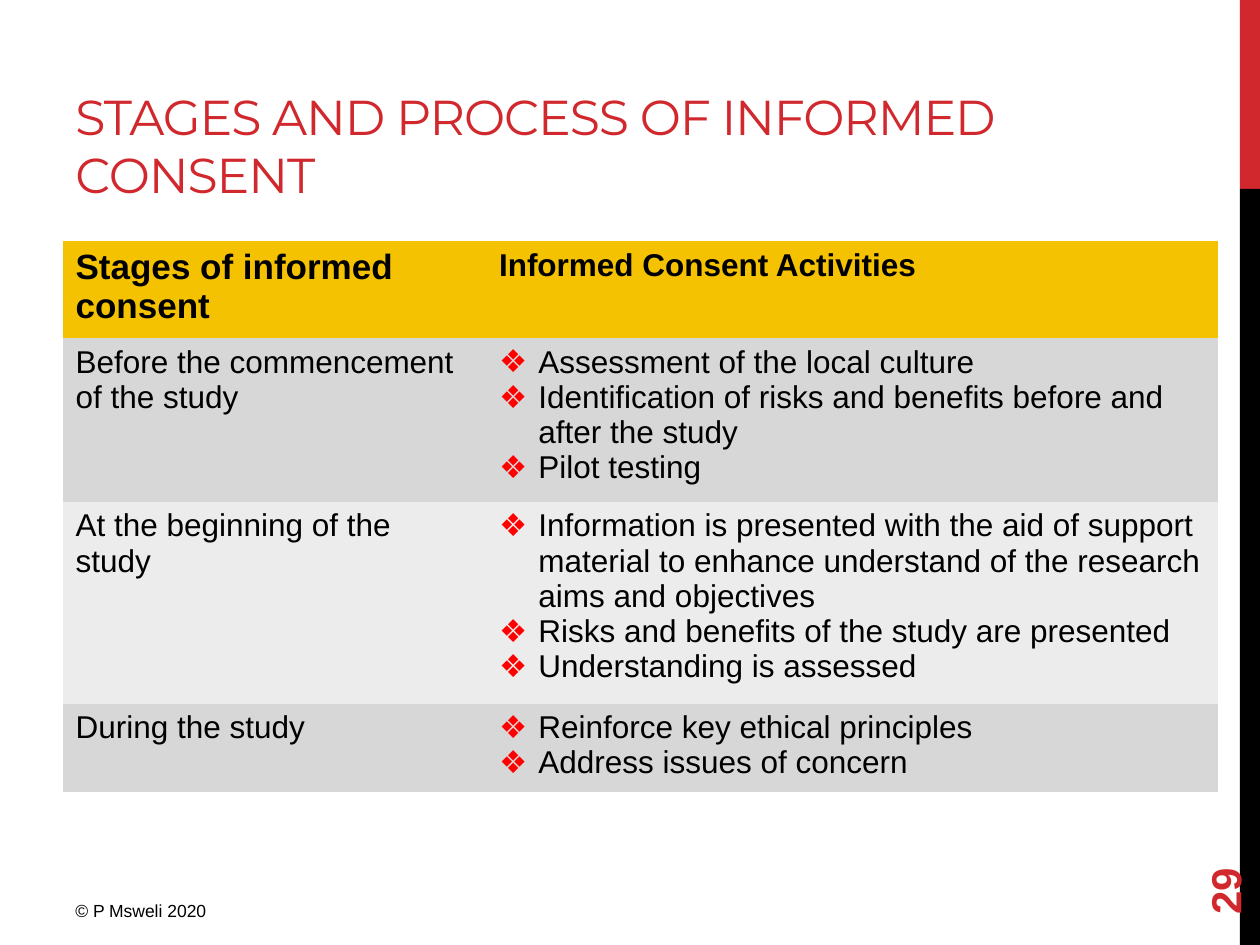
from typing import NamedTuple

from lxml.etree import SubElement
from pptx import Presentation
from pptx.dml.color import RGBColor
from pptx.enum.shapes import MSO_SHAPE as Preset
from pptx.enum.text import MSO_ANCHOR as Anchor
from pptx.oxml.ns import qn
from pptx.util import Pt

RED, BLACK, GOLD = "D1282E", "000000", "F5C201"
DARK_BAND, LIGHT_BAND, BULLET_RED = "D7D7D7", "ECECEC", "FF0000"
NO_STYLE_NO_GRID = "{2D5ABB26-0587-4C30-8999-92F81FD0307C}"
BULLET_INDENT = Pt(22.5)


class Bar(NamedTuple):
    top: float
    height: float
    color: str


class Label(NamedTuple):
    text: str
    box: tuple[float, float, float, float]
    font: dict
    color: str
    anchor: Anchor = Anchor.TOP
    rotation: float = 0
    spacing: int = 0


class Stage(NamedTuple):
    name: str
    activities: list[str]
    height: float


BARS = [Bar(0, 108, RED), Bar(108, 432, BLACK)]

LABELS = [
    Label("STAGES AND PROCESS OF INFORMED CONSENT", (36, 12, 660, 108),
          {"name": "Montserrat", "size": Pt(28)}, RED, Anchor.BOTTOM, spacing=-60),
    Label("© P Msweli 2020", (36, 511, 270, 22.5),
          {"name": "Arial", "size": Pt(10)}, BLACK),
    Label("29", (648, 463.5, 103.5, 29),
          {"name": "Arial", "size": Pt(24), "bold": True}, RED, Anchor.MIDDLE, 270),
]

HEADINGS = [("Stages of informed consent", 20), ("Informed Consent Activities", 18)]
HEADING_HEIGHT = 52
COLUMN_WIDTHS = (242, 418)
STAGES = [
    Stage("Before the commencement of the study", [
        "Assessment of the local culture",
        "Identification of risks and benefits before and after the study",
        "Pilot testing",
    ], 88),
    Stage("At the beginning of the study", [
        "Information is presented with the aid of support material "
        "to enhance understand of the research aims and objectives",
        "Risks and benefits of the study are presented",
        "Understanding is assessed",
    ], 108),
    Stage("During the study", [
        "Reinforce key ethical principles",
        "Address issues of concern",
    ], 47.5),
]


def rgb(color: str) -> RGBColor:
    return RGBColor.from_string(color)


def paint(target, color: str) -> None:
    target.fill.solid()
    target.fill.fore_color.rgb = rgb(color)


def write(paragraph, text: str, font: dict, color: str):
    run = paragraph.add_run()
    run.text = text
    for attribute, value in font.items():
        setattr(run.font, attribute, value)
    run.font.color.rgb = rgb(color)
    return run


def add_bar(slide, bar: Bar) -> None:
    shape = slide.shapes.add_shape(
        Preset.RECTANGLE, Pt(708.5), Pt(bar.top), Pt(11.5), Pt(bar.height))
    shape.shadow.inherit = False
    shape.line.fill.background()
    paint(shape, bar.color)


def add_label(slide, label: Label) -> None:
    shape = slide.shapes.add_textbox(*map(Pt, label.box))
    shape.rotation = label.rotation
    frame = shape.text_frame
    frame.word_wrap = True
    frame.vertical_anchor = label.anchor
    run = write(frame.paragraphs[0], label.text, label.font, label.color)
    if label.spacing:
        run.font.element.set("spc", str(label.spacing)) if hasattr(
            run.font, "element") else run._r.get_or_add_rPr().set("spc", str(label.spacing))


def add_bullet(paragraph) -> None:
    properties = paragraph._p.get_or_add_pPr()
    properties.set("marL", str(BULLET_INDENT))
    properties.set("indent", str(-BULLET_INDENT))
    color = SubElement(properties, qn("a:buClr"))
    SubElement(color, qn("a:srgbClr"), val=BULLET_RED)
    SubElement(properties, qn("a:buFont"), typeface="Arial")
    SubElement(properties, qn("a:buChar"), char="❖")


def fill_cell(cell, lines: list[str], band: str, size: float = 18,
              bold: bool = False, bulleted: bool = False) -> None:
    paint(cell, band)
    frame = cell.text_frame
    font = {"name": "Arial", "size": Pt(size), "bold": bold}
    for index, line in enumerate(lines):
        paragraph = frame.add_paragraph() if index else frame.paragraphs[0]
        if bulleted:
            add_bullet(paragraph)
        write(paragraph, line, font, BLACK)


def add_stage_table(slide) -> None:
    heights = [HEADING_HEIGHT, *(stage.height for stage in STAGES)]
    graphic = slide.shapes.add_table(
        len(heights), len(COLUMN_WIDTHS), Pt(36), Pt(138),
        Pt(sum(COLUMN_WIDTHS)), Pt(sum(heights)))
    table = graphic.table
    for style in graphic.element.iter(qn("a:tableStyleId")):
        style.text = NO_STYLE_NO_GRID
    for column, width in zip(table.columns, COLUMN_WIDTHS):
        column.width = Pt(width)
    for row, height in zip(table.rows, heights):
        row.height = Pt(height)
    for column, (heading, size) in enumerate(HEADINGS):
        fill_cell(table.cell(0, column), [heading], GOLD, size, bold=True)
    for row, stage in enumerate(STAGES, start=1):
        band = DARK_BAND if row % 2 else LIGHT_BAND
        fill_cell(table.cell(row, 0), [stage.name], band)
        fill_cell(table.cell(row, 1), stage.activities, band, bulleted=True)


def main() -> None:
    presentation = Presentation()
    presentation.slide_width, presentation.slide_height = Pt(720), Pt(540)
    slide = presentation.slides.add_slide(presentation.slide_layouts[6])
    for bar in BARS:
        add_bar(slide, bar)
    title, *notes = LABELS
    add_label(slide, title)
    add_stage_table(slide)
    for label in notes:
        add_label(slide, label)
    presentation.save("out.pptx")


if __name__ == "__main__":
    main()
